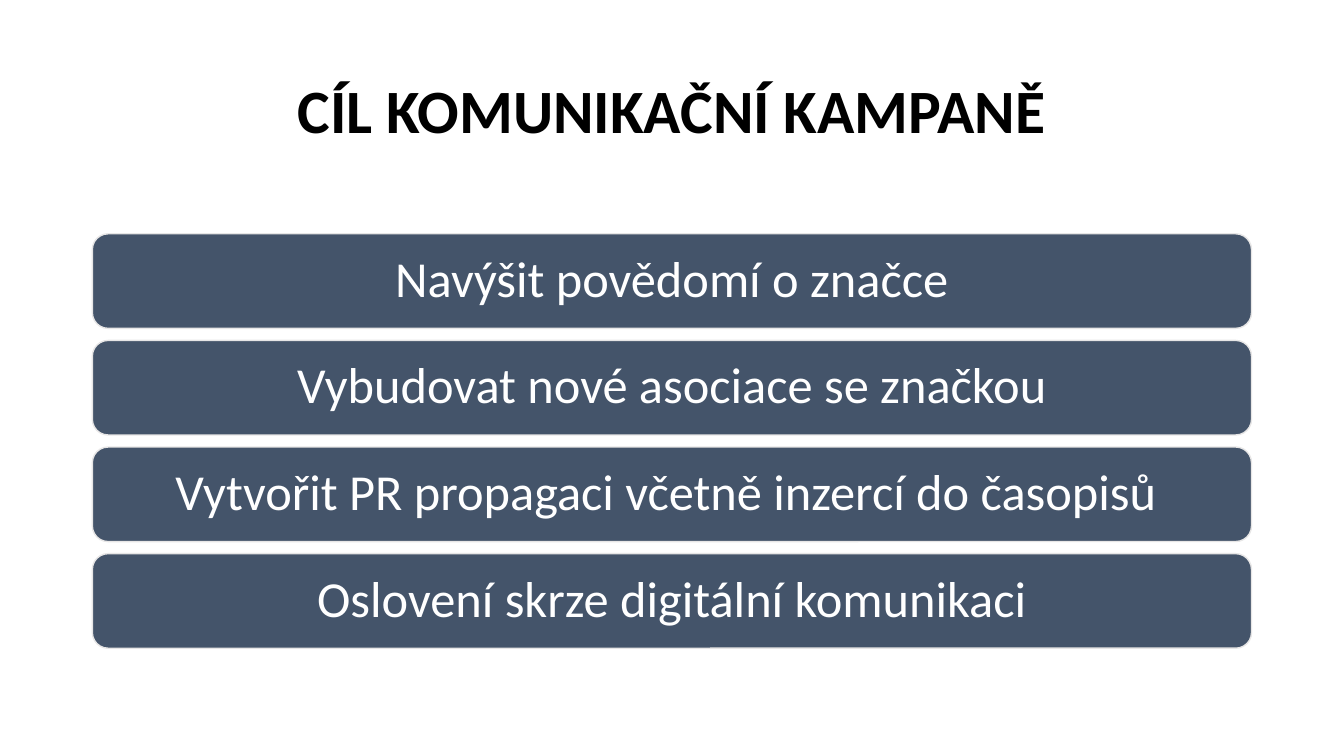
from pptx import Presentation
from pptx.dml.color import RGBColor
from pptx.enum.shapes import MSO_SHAPE
from pptx.enum.text import MSO_ANCHOR, MSO_AUTO_SIZE, PP_ALIGN
from pptx.util import Pt

ROUNDED = MSO_SHAPE.ROUNDED_RECTANGLE
MIDDLE = MSO_ANCHOR.MIDDLE
CENTER = PP_ALIGN.CENTER
NO_AUTOFIT = MSO_AUTO_SIZE.NONE

BLACK = RGBColor(0x00, 0x00, 0x00)
WHITE = RGBColor(0xFF, 0xFF, 0xFF)
SLATE = RGBColor(0x44, 0x54, 0x6A)
LIGHT_GRAY = RGBColor(0xE7, 0xE6, 0xE6)
FONT = "Calibri"

TITLE = "CÍL KOMUNIKAČNÍ KAMPANĚ"
GOALS = [
    "Navýšit povědomí o značce",
    "Vybudovat nové asociace se značkou",
    "Vytvořit PR propagaci včetně inzercí do časopisů ",
    "Oslovení skrze digitální komunikaci",
]


def set_text(sp, text, size, color, bold=False):
    """Write one centred line of formatted text into a shape."""
    tf = sp.text_frame
    tf.text = text
    tf.word_wrap = True
    tf.auto_size = NO_AUTOFIT
    tf.vertical_anchor = MIDDLE
    p = tf.paragraphs[0]
    p.alignment = CENTER
    p.line_spacing = 0.9
    font = p.runs[0].font
    font.name, font.size, font.bold = FONT, Pt(size), bold
    font.color.rgb = color


def add_title(s, left, top, width, height):
    """Place the title placeholder in the given box."""
    sp = s.shapes.title
    sp.left, sp.top, sp.width, sp.height = Pt(left), Pt(top), Pt(width), Pt(height)
    set_text(sp, TITLE, 44, BLACK, bold=True)


def add_goals(s, left, top, width, height, gap=8.6):
    """Stack the goals as equal rounded bars that fill the given box."""
    bar_height = (height - gap * (len(GOALS) - 1)) / len(GOALS)
    for i, goal in enumerate(GOALS):
        y = top + i * (bar_height + gap)
        sp = s.shapes.add_shape(ROUNDED, Pt(left), Pt(y), Pt(width), Pt(bar_height))
        sp.shadow.inherit = False
        sp.fill.solid()
        sp.fill.fore_color.rgb = SLATE
        sp.line.color.rgb = LIGHT_GRAY
        sp.line.width = Pt(1)
        set_text(sp, goal, 36, WHITE)


def main():
    """Build the slide and save it."""
    prs = Presentation()
    prs.slide_width, prs.slide_height = Pt(960), Pt(540)
    s = prs.slides.add_slide(prs.slide_layouts[5])
    add_title(s, 66, 28.75, 828, 104.4)
    add_goals(s, 66, 167, 828, 296)
    prs.save("out.pptx")


if __name__ == "__main__":
    main()
